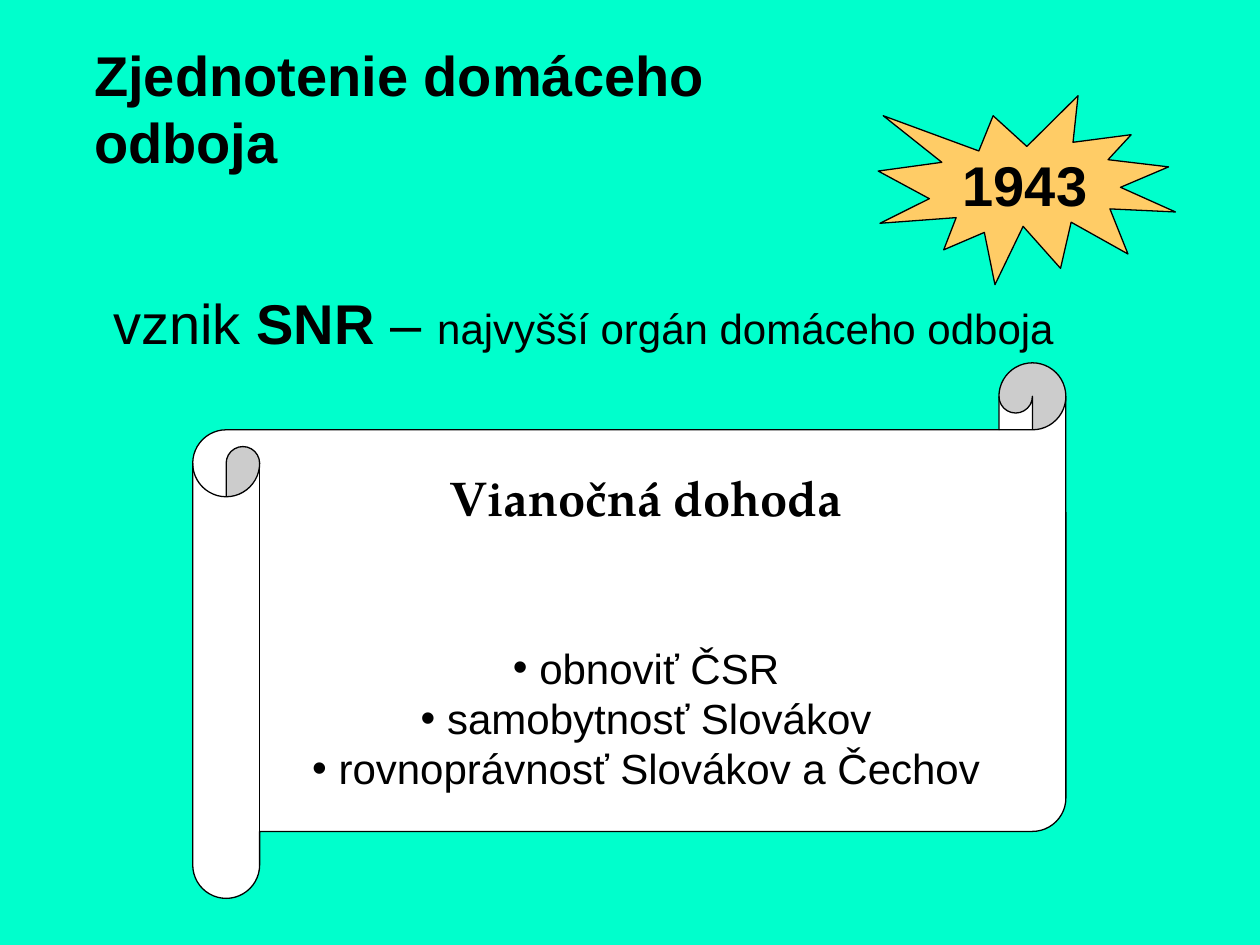
"""Build the slide on the 1943 unification of the domestic resistance."""
from dataclasses import dataclass

from lxml import etree
from pptx import Presentation
from pptx.dml.color import RGBColor
from pptx.enum.shapes import MSO_SHAPE
from pptx.enum.text import MSO_ANCHOR, MSO_AUTO_SIZE, PP_ALIGN
from pptx.oxml.ns import qn
from pptx.util import Inches, Pt

BURST = MSO_SHAPE.EXPLOSION1
SCROLL = MSO_SHAPE.HORIZONTAL_SCROLL
MIDDLE = MSO_ANCHOR.MIDDLE
GROW = MSO_AUTO_SIZE.SHAPE_TO_FIT_TEXT
LEFT, CENTER = PP_ALIGN.LEFT, PP_ALIGN.CENTER


@dataclass(frozen=True)
class Theme:
    background: str = "00FFCC"
    ink: str = "000000"
    burst: str = "FFCC66"
    paper: str = "FFFFFF"
    font: str = "Arial"
    scroll_font: str = "TeX Gyre Pagella"
    large: int = 32
    heading: int = 28
    body: int = 24
    outline: float = 0.75
    heading_gap: int = 66
    bullet_indent: float = 0.21


@dataclass(frozen=True)
class Box:
    left: float
    top: float
    width: float
    height: float

    def lengths(self) -> tuple:
        return tuple(map(Inches, (self.left, self.top, self.width, self.height)))


THEME = Theme()
TITLE_BOX = Box(0.65, 0.27, 6.4, 0.63)
YEAR_BOX = Box(6.97, 0.76, 2.36, 1.5)
COUNCIL_BOX = Box(0.8, 2.24, 8.45, 0.63)
AGREEMENT_BOX = Box(1.53, 2.88, 6.93, 4.25)
AGREEMENT_POINTS = ("obnoviť ČSR", "samobytnosť Slovákov", "rovnoprávnosť Slovákov a Čechov")


def add_run(paragraph, text: str, *, size: int = THEME.large, bold: bool = False,
            font: str = THEME.font, align: PP_ALIGN = LEFT) -> None:
    """Append formatted text to a paragraph."""
    paragraph.alignment = align
    run = paragraph.add_run()
    run.text = text
    run.font.size = Pt(size)
    run.font.bold = bold
    run.font.name = font
    run.font.color.rgb = RGBColor.from_string(THEME.ink)


def add_bullet(paragraph) -> None:
    """Give a paragraph a round bullet with a hanging indent."""
    properties = paragraph._p.get_or_add_pPr()
    indent = Inches(THEME.bullet_indent)
    properties.set("marL", str(indent))
    properties.set("indent", str(-indent))
    etree.SubElement(properties, qn("a:buFont")).set("typeface", THEME.font)
    etree.SubElement(properties, qn("a:buChar")).set("char", "•")


def add_text_frame(slide, box: Box):
    """Add a wrapping text box and return its frame."""
    frame = slide.shapes.add_textbox(*box.lengths()).text_frame
    frame.word_wrap = True
    frame.auto_size = GROW
    return frame


def add_figure(slide, kind: MSO_SHAPE, box: Box, fill: str):
    """Add an outlined preset shape and return its text frame."""
    figure = slide.shapes.add_shape(kind, *box.lengths())
    figure.shadow.inherit = False
    figure.fill.solid()
    figure.fill.fore_color.rgb = RGBColor.from_string(fill)
    figure.line.color.rgb = RGBColor.from_string(THEME.ink)
    figure.line.width = Pt(THEME.outline)
    frame = figure.text_frame
    frame.word_wrap = False
    frame.vertical_anchor = MIDDLE
    return frame


def add_agreement(slide) -> None:
    """Draw the scroll with the agreement and its points."""
    frame = add_figure(slide, SCROLL, AGREEMENT_BOX, THEME.paper)
    heading = frame.paragraphs[0]
    add_run(heading, "Vianočná dohoda", size=THEME.heading, bold=True,
            font=THEME.scroll_font, align=CENTER)
    heading.space_after = Pt(THEME.heading_gap)
    for point in AGREEMENT_POINTS:
        paragraph = frame.add_paragraph()
        add_run(paragraph, point, size=THEME.body, align=CENTER)
        add_bullet(paragraph)


def main() -> None:
    """Assemble and save the slide."""
    presentation = Presentation()
    presentation.slide_width, presentation.slide_height = Inches(10), Inches(7.5)
    slide = presentation.slides.add_slide(presentation.slide_layouts[6])
    slide.background.fill.solid()
    slide.background.fill.fore_color.rgb = RGBColor.from_string(THEME.background)

    title = add_text_frame(slide, TITLE_BOX).paragraphs[0]
    add_run(title, "Zjednotenie domáceho odboja", bold=True)

    year = add_figure(slide, BURST, YEAR_BOX, THEME.burst).paragraphs[0]
    add_run(year, "1943", bold=True, align=CENTER)

    council = add_text_frame(slide, COUNCIL_BOX).paragraphs[0]
    add_run(council, "vznik ")
    add_run(council, "SNR ", bold=True)
    add_run(council, "– ")
    add_run(council, "najvyšší orgán domáceho odboja", size=THEME.body)

    add_agreement(slide)
    presentation.save("out.pptx")


if __name__ == "__main__":
    main()
